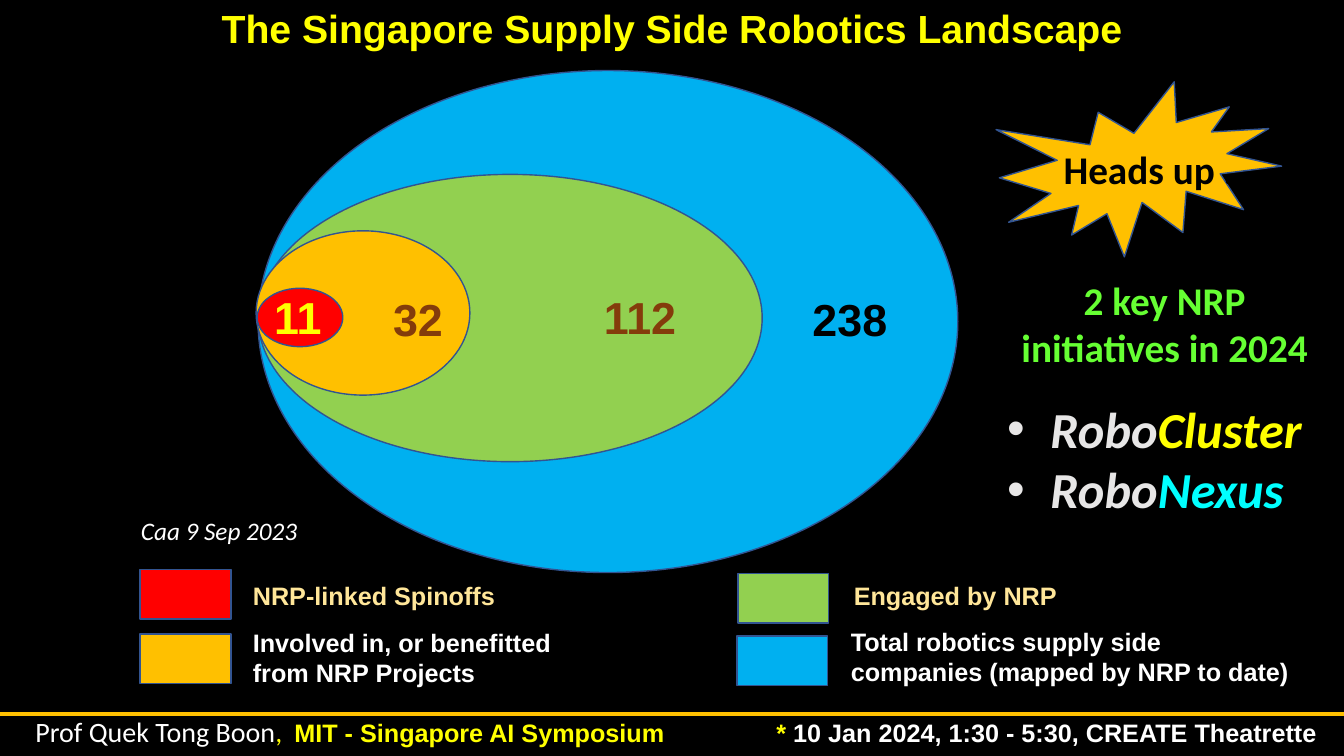
from lxml.etree import SubElement
from pptx import Presentation
from pptx.dml.color import RGBColor
from pptx.enum.shapes import MSO_CONNECTOR, MSO_SHAPE
from pptx.enum.text import PP_ALIGN
from pptx.oxml.ns import qn
from pptx.util import Inches, Pt

BLACK = RGBColor(0x00, 0x00, 0x00)
WHITE = RGBColor(0xFF, 0xFF, 0xFF)
YELLOW = RGBColor(0xFF, 0xFF, 0x00)
CREAM = RGBColor(0xFF, 0xE6, 0x99)
PALE_GREY = RGBColor(0xE7, 0xE6, 0xE6)
CYAN = RGBColor(0x00, 0xFF, 0xFF)
LIME = RGBColor(0x66, 0xFF, 0x33)
BROWN = RGBColor(0x84, 0x3C, 0x0B)
RED = RGBColor(0xFF, 0x00, 0x00)
AMBER = RGBColor(0xFF, 0xC0, 0x00)
GREEN = RGBColor(0x92, 0xD0, 0x50)
BLUE = RGBColor(0x00, 0xB0, 0xF0)
OUTLINE = RGBColor(0x32, 0x54, 0x91)


def add_run(paragraph, text, size, color, font="Arial", bold=True, italic=False):
    """Append one formatted run to a paragraph."""
    run = paragraph.add_run()
    run.text = text
    run.font.name = font
    run.font.size = Pt(size)
    run.font.bold = bold
    run.font.italic = italic
    run.font.color.rgb = color


def add_box(slide, place, wrap=True):
    """Add an empty text box and return its text frame."""
    frame = slide.shapes.add_textbox(*map(Inches, place)).text_frame
    frame.word_wrap = wrap
    return frame


def add_label(slide, place, text, size, color, align=PP_ALIGN.LEFT, wrap=True, **style):
    """Add a text box holding a single run."""
    paragraph = add_box(slide, place, wrap).paragraphs[0]
    paragraph.alignment = align
    add_run(paragraph, text, size, color, **style)


def add_figure(slide, kind, place, fill, rotation=0):
    """Add a filled preset shape with the common outline."""
    figure = slide.shapes.add_shape(kind, *map(Inches, place))
    figure.shadow.inherit = False
    figure.fill.solid()
    figure.fill.fore_color.rgb = fill
    figure.line.color.rgb = OUTLINE
    figure.line.width = Pt(1)
    figure.rotation = rotation


def add_tab_stops(paragraph, stops):
    """Set left tab stops, in inches, on a paragraph."""
    tab_list = SubElement(paragraph._p.get_or_add_pPr(), qn("a:tabLst"))
    for stop in stops:
        SubElement(tab_list, qn("a:tab"), pos=str(Inches(stop)), algn="l")


def add_bullet(paragraph, indent, color):
    """Give a paragraph a hanging round bullet."""
    properties = paragraph._p.get_or_add_pPr()
    properties.set("marL", str(Inches(indent)))
    properties.set("indent", str(-Inches(indent)))
    bullet_color = SubElement(properties, qn("a:buClr"))
    SubElement(bullet_color, qn("a:srgbClr"), val=str(color))
    SubElement(properties, qn("a:buFont"), typeface="Arial")
    SubElement(properties, qn("a:buChar"), char="•")


def add_footer(slide):
    """Add the speaker and event line under its rule."""
    frame = add_box(slide, (0.08, 7.04, 13.25, 0.44))
    frame.margin_left = Inches(0.27)
    speaker_line = frame.paragraphs[0]
    add_tab_stops(speaker_line, (2.57, 7.35))
    add_run(speaker_line, "Prof Quek Tong Boon", 20, WHITE, "Calibri", False)
    add_run(speaker_line, ",\t", 20, YELLOW, "Calibri", False)
    add_run(speaker_line, "MIT - Singapore AI Symposium\t* ", 18, YELLOW)
    add_run(speaker_line, "10 Jan 2024, 1:30 - 5:30, CREATE Theatrette", 18, WHITE)

    rule = slide.shapes.add_connector(
        MSO_CONNECTOR.STRAIGHT, 0, Inches(7.08), Inches(13.33), Inches(7.08))
    rule.line.color.rgb = AMBER
    rule.line.width = Pt(3)
    SubElement(rule._element.spPr, qn("a:effectLst"))


def add_landscape(slide):
    """Add the nested ellipses with their company counts."""
    rings = (
        ((2.56, 0.7, 6.94, 4.98), BLUE, "238", (7.96, 2.84, 0.96, 0.64), BLACK),
        ((2.56, 1.73, 5, 2.85), GREEN, "112", (5.89, 2.83, 0.92, 0.64), BROWN),
        ((2.54, 2.29, 2.12, 1.63), AMBER, "32", (3.8, 2.84, 0.7, 0.64), BROWN),
        ((2.55, 2.86, 0.85, 0.58), RED, "11", (2.62, 2.83, 0.88, 0.64), YELLOW),
    )
    for ring, fill, count, count_place, count_color in rings:
        add_figure(slide, MSO_SHAPE.OVAL, ring, fill)
        add_label(slide, count_place, count, 32, count_color)


def add_legend(slide):
    """Add the colour key below the ellipses."""
    entries = (
        (1.39, 5.65, RED, "NRP-linked Spinoffs", (2.41, 5.71, 2.63, 0.4), CREAM),
        (1.39, 6.29, AMBER, "Involved in, or benefitted from NRP Projects",
         (2.41, 6.17, 3.33, 0.71), WHITE),
        (7.32, 5.69, GREEN, "Engaged by NRP", (8.37, 5.71, 2.24, 0.4), CREAM),
        (7.31, 6.31, BLUE, "Total robotics supply side companies (mapped by NRP to date)",
         (8.34, 6.16, 4.62, 0.71), WHITE),
    )
    for left, top, fill, meaning, place, color in entries:
        add_figure(slide, MSO_SHAPE.RECTANGLE, (left, top, 0.9, 0.49), fill)
        add_label(slide, place, meaning, 18, color, wrap=color == WHITE)


def add_heads_up(slide):
    """Add the starburst and the two initiatives."""
    add_label(slide, (9.98, 2.69, 3.14, 1.04), "2 key NRP initiatives in 2024",
              28, LIME, PP_ALIGN.CENTER, font="Calibri")
    add_figure(slide, MSO_SHAPE.EXPLOSION1, (9.92, 0.88, 2.78, 1.63), AMBER, 350.4)
    add_label(slide, (10.45, 1.39, 2.09, 0.57), "Heads up …", 28, BLACK,
              wrap=False, font="Calibri")

    frame = add_box(slide, (9.89, 3.9, 3.19, 1.31), wrap=False)
    initiatives = (("Cluster", YELLOW), ("Nexus", CYAN))
    for index, (ending, color) in enumerate(initiatives):
        initiative = frame.add_paragraph() if index else frame.paragraphs[0]
        add_bullet(initiative, 0.43, PALE_GREY)
        add_run(initiative, "Robo", 36, PALE_GREY, "Calibri", italic=True)
        add_run(initiative, ending, 36, color, "Calibri", italic=True)


def main():
    """Build and save the slide."""
    presentation = Presentation()
    presentation.slide_width = Inches(13.33)
    presentation.slide_height = Inches(7.5)
    slide = presentation.slides.add_slide(presentation.slide_layouts[6])
    slide.background.fill.solid()
    slide.background.fill.fore_color.rgb = BLACK

    add_footer(slide)
    add_landscape(slide)
    add_legend(slide)
    add_label(slide, (2.08, -0.01, 9.17, 0.57),
              "The Singapore Supply Side Robotics Landscape", 28, YELLOW, PP_ALIGN.CENTER)
    add_label(slide, (1.3, 5.06, 1.77, 0.4), "Caa 9 Sep 2023", 18, WHITE,
              wrap=False, font="Calibri", bold=False, italic=True)
    add_heads_up(slide)
    presentation.save("out.pptx")


if __name__ == "__main__":
    main()
